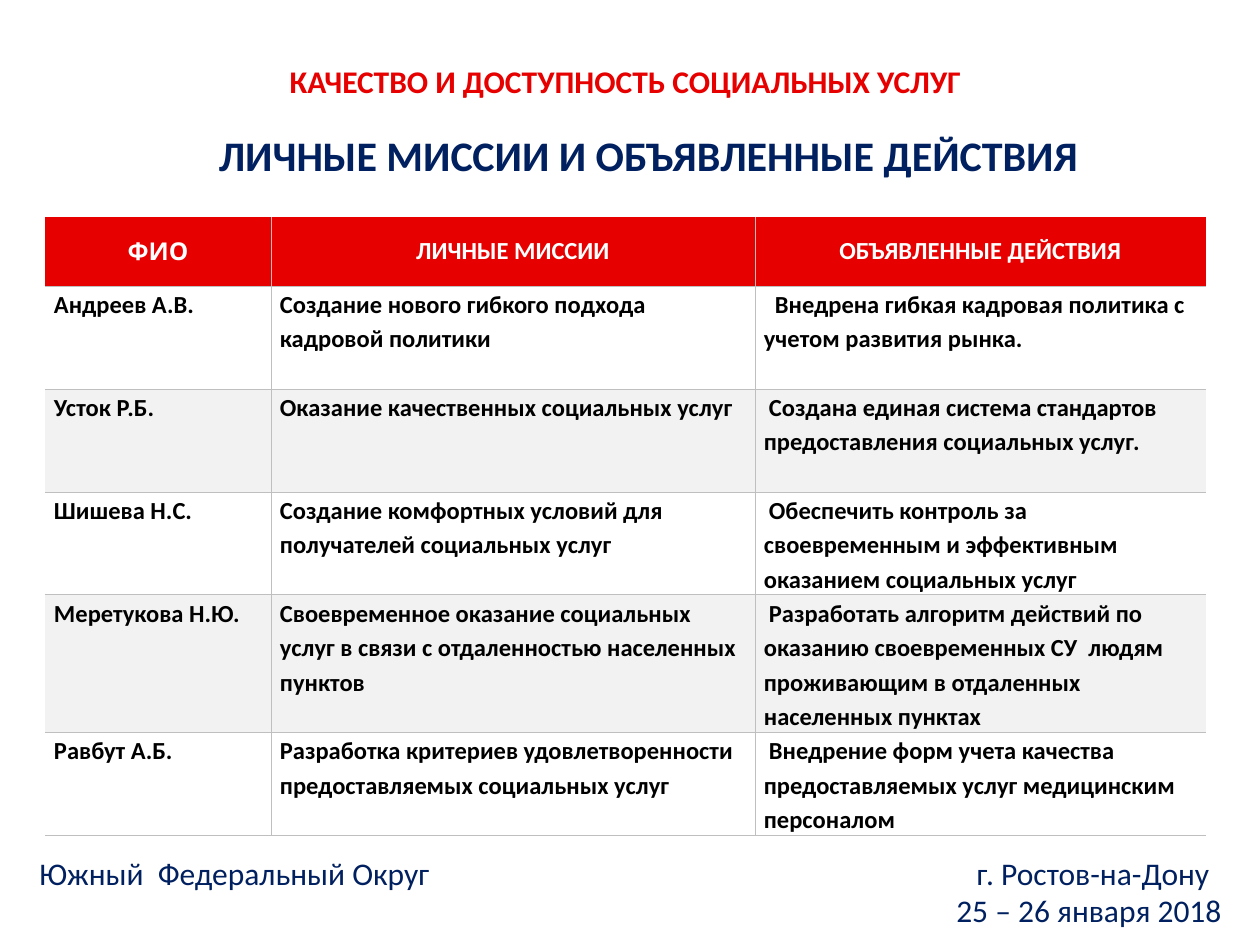
from typing import NamedTuple

from lxml import etree
from pptx import Presentation
from pptx.dml.color import RGBColor
from pptx.enum.text import MSO_ANCHOR, MSO_AUTO_SIZE, PP_ALIGN
from pptx.oxml.ns import qn
from pptx.util import Emu, Pt

PX = 914400 // 126
LEFT, CENTER, RIGHT = PP_ALIGN.LEFT, PP_ALIGN.CENTER, PP_ALIGN.RIGHT
TOP, MIDDLE = MSO_ANCHOR.TOP, MSO_ANCHOR.MIDDLE
RED, NAVY, WHITE, BLACK = "E60000", "002060", "FFFFFF", "000000"
BAND, RULE = "F2F2F2", "BFBFBF"


class Style(NamedTuple):
    size: int
    color: str
    bold: bool = True
    font: str = "Calibri"


class Box(NamedTuple):
    left: int
    top: int
    width: int
    height: int


class Person(NamedTuple):
    name: str
    mission: str
    action: str
    height: int = 103
    action_indent: int = 5


HEADERS = [("ФИО", "Cabin"), ("ЛИЧНЫЕ МИССИИ", "Calibri"),
           ("ОБЪЯВЛЕННЫЕ ДЕЙСТВИЯ", "Calibri")]
PEOPLE = [
    Person("Андреев А.В.", "Создание нового гибкого подхода кадровой политики",
           "Внедрена гибкая кадровая политика с учетом развития рынка.",
           action_indent=11),
    Person("Усток Р.Б.", "Оказание качественных социальных услуг",
           "Создана единая система стандартов предоставления социальных услуг."),
    Person("Шишева Н.С.",
           "Создание комфортных условий для получателей социальных услуг",
           "Обеспечить контроль за своевременным и эффективным оказанием "
           "социальных услуг"),
    Person("Меретукова Н.Ю.",
           "Своевременное оказание социальных услуг в связи с отдаленностью "
           "населенных пунктов",
           "Разработать алгоритм действий по оказанию своевременных СУ  людям "
           "проживающим в отдаленных населенных пунктах", height=137),
    Person("Равбут А.Б.",
           "Разработка критериев удовлетворенности предоставляемых социальных "
           "услуг",
           "Внедрение форм учета качества предоставляемых услуг медицинским "
           "персоналом"),
]
COLUMNS = [226, 484, 451]
HEADER_HEIGHT = 69


def px(n: int) -> Emu:
    return Emu(n * PX)


def rgb(color: str) -> RGBColor:
    return RGBColor.from_string(color)


def write(p, text: str, style: Style, align=LEFT) -> None:
    p.alignment = align
    r = p.add_run()
    r.text = text
    r.font.size = Pt(style.size)
    r.font.name = style.font
    r.font.bold = style.bold
    r.font.color.rgb = rgb(style.color)


def add_box(slide, box: Box, anchor=MIDDLE, wrap: bool = True):
    tf = slide.shapes.add_textbox(*map(px, box)).text_frame
    tf.word_wrap = wrap
    tf.vertical_anchor = anchor
    return tf


def add_tabs(p, stops: list[tuple[int, str]]) -> None:
    tabs = etree.SubElement(p._p.get_or_add_pPr(), qn("a:tabLst"))
    for pos, align in stops:
        etree.SubElement(tabs, qn("a:tab"), pos=str(px(pos)), algn=align)


def set_borders(cell, shown: dict[str, bool]) -> None:
    tcPr = cell._tc.get_or_add_tcPr()
    for i, (side, visible) in enumerate(shown.items()):
        ln = etree.Element(qn(f"a:ln{side}"), w=str(Pt(0.5)))
        tcPr.insert(i, ln)
        if visible:
            fill = etree.SubElement(ln, qn("a:solidFill"))
            etree.SubElement(fill, qn("a:srgbClr"), val=RULE)
        else:
            etree.SubElement(ln, qn("a:noFill"))


def format_cell(cell, fill: str, anchor, pad: int) -> None:
    cell.fill.solid()
    cell.fill.fore_color.rgb = rgb(fill)
    cell.vertical_anchor = anchor
    cell.margin_left = cell.margin_right = px(9)
    cell.margin_top = cell.margin_bottom = px(pad)


def add_missions_table(slide) -> None:
    heights = [HEADER_HEIGHT] + [person.height for person in PEOPLE]
    box = Box(45, 217, sum(COLUMNS), sum(heights))
    table = slide.shapes.add_table(len(heights), len(COLUMNS),
                                   *map(px, box)).table
    table.horz_banding = False
    for column, width in zip(table.columns, COLUMNS):
        column.width = px(width)
    for row, height in zip(table.rows, heights):
        row.height = px(height)

    # Header row
    for c, (text, font) in enumerate(HEADERS):
        cell = table.cell(0, c)
        format_cell(cell, RED, MIDDLE, 5)
        write(cell.text_frame.paragraphs[0], text,
              Style(14, WHITE, font=font), CENTER)

    # One row per person
    for i, person in enumerate(PEOPLE, 1):
        texts = (person.name, person.mission, person.action)
        for c, text in enumerate(texts):
            cell = table.cell(i, c)
            format_cell(cell, WHITE if i % 2 else BAND, TOP, 0)
            p = cell.text_frame.paragraphs[0]
            p.line_spacing = 1.15
            write(p, text, Style(14, BLACK))
            if c == 2:
                p._p.get_or_add_pPr().set("indent",
                                          str(px(person.action_indent)))

    # Thin rules between cells and under the last row
    for r in range(len(heights)):
        for c in range(len(COLUMNS)):
            set_borders(table.cell(r, c), {
                "L": c > 0, "R": c < len(COLUMNS) - 1, "T": r > 0, "B": True})


def main() -> None:
    prs = Presentation()
    prs.slide_width, prs.slide_height = px(1260), px(945)
    slide = prs.slides.add_slide(prs.slide_layouts[6])

    add_missions_table(slide)

    # Titles
    tf = add_box(slide, Box(202, 123, 893, 63), TOP, wrap=False)
    tf.auto_size = MSO_AUTO_SIZE.SHAPE_TO_FIT_TEXT
    write(tf.paragraphs[0], "ЛИЧНЫЕ МИССИИ И ОБЪЯВЛЕННЫЕ ДЕЙСТВИЯ",
          Style(24, NAVY), CENTER)
    tf = add_box(slide, Box(175, 56, 901, 49))
    write(tf.paragraphs[0], "КАЧЕСТВО И ДОСТУПНОСТЬ СОЦИАЛЬНЫХ УСЛУГ",
          Style(18, RED), CENTER)

    # Footer: region on the left, city and dates on the right
    footer = Style(18, NAVY, bold=False)
    tf = add_box(slide, Box(16, 854, 1218, 75))
    p = tf.paragraphs[0]
    write(p, "\tЮжный  Федеральный Округ\tг. Ростов-на-Дону", footer)
    add_tabs(p, [(11, "l"), (1181, "r")])
    write(tf.add_paragraph(), "25 – 26 января 2018", footer, RIGHT)

    prs.save("out.pptx")


if __name__ == "__main__":
    main()
